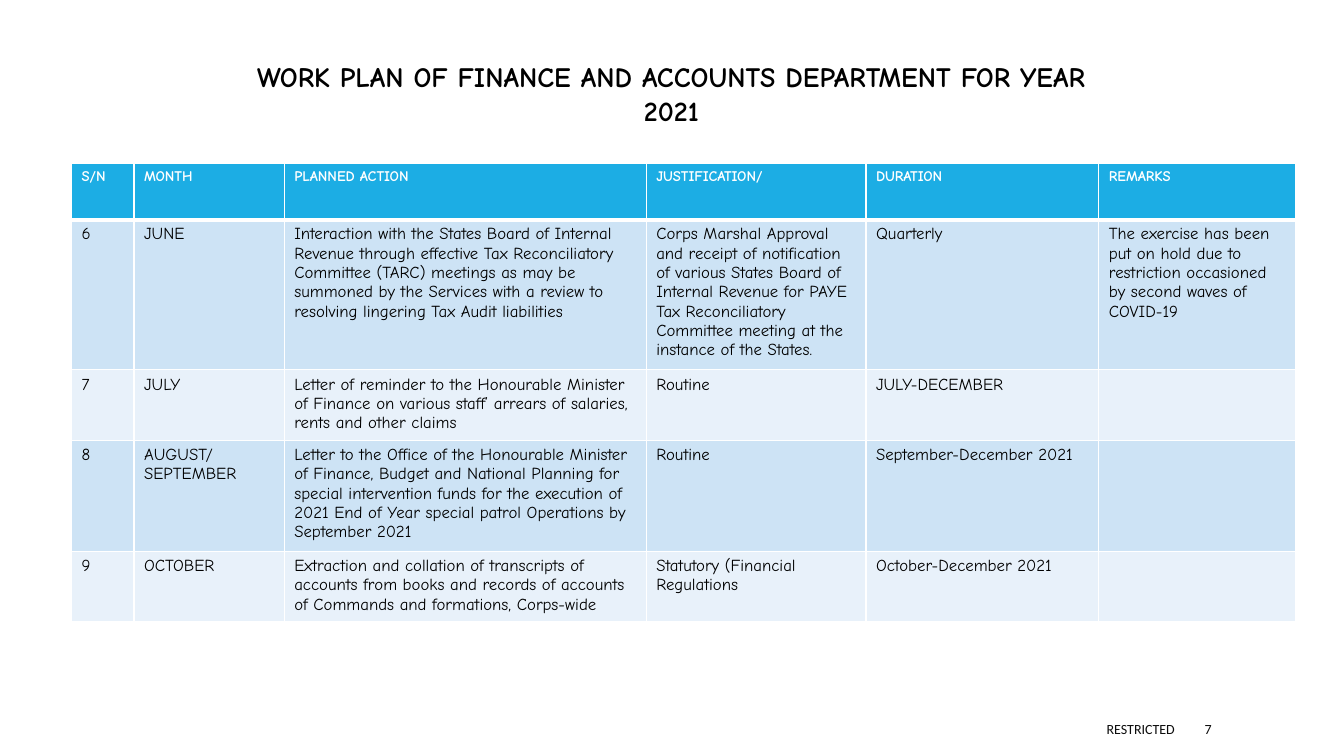
from lxml.etree import SubElement
from pptx import Presentation
from pptx.dml.color import RGBColor
from pptx.enum.text import MSO_ANCHOR as Anchor, MSO_AUTO_SIZE as AutoSize, PP_ALIGN as Align
from pptx.oxml.ns import qn
from pptx.util import Inches, Pt

COLUMN_WIDTHS = [0.62, 1.49, 3.59, 2.18, 2.31, 1.95]
ROW_HEIGHTS = [0.56, 1.49, 0.7, 1.1, 0.7]
WORK_PLAN = [
    ["S/N", "MONTH", "PLANNED ACTION", "JUSTIFICATION/", "DURATION", "REMARKS"],
    ["6", "JUNE",
     "Interaction with the States Board of Internal Revenue through effective Tax "
     "Reconciliatory Committee (TARC) meetings as may be summoned by the Services "
     "with a review to resolving lingering Tax Audit liabilities",
     "Corps Marshal Approval and receipt of notification of various States Board of "
     "Internal Revenue for PAYE Tax Reconciliatory Committee meeting at the instance "
     "of the States.",
     "Quarterly",
     "The exercise has been put on hold due to restriction occasioned by second waves "
     "of COVID-19"],
    ["7", "JULY",
     "Letter of reminder to the Honourable Minister of Finance on various staff’ "
     "arrears of salaries, rents and other claims",
     "Routine", "JULY-DECEMBER", ""],
    ["8", "AUGUST/SEPTEMBER",
     "Letter to the Office of the Honourable Minister of Finance, Budget and National "
     "Planning for special intervention funds for the execution of 2021 End of Year "
     "special patrol Operations by September 2021",
     "Routine", "September-December 2021", ""],
    ["9", "OCTOBER",
     "Extraction and collation of transcripts of accounts from books and records of "
     "accounts of Commands and formations, Corps-wide",
     "Statutory (Financial Regulations", "October-December 2021", ""],
]


def rgb(hex_color):
    return RGBColor.from_string(hex_color)


def write(frame, text, size=12, color="000000", font="Comic Neue", bold=False,
          align=Align.LEFT, anchor=Anchor.TOP):
    """Fill a text frame with one formatted paragraph."""
    frame.word_wrap = True
    frame.vertical_anchor = anchor
    paragraph = frame.paragraphs[0]
    paragraph.alignment = align
    run = paragraph.add_run()
    run.text = text
    run.font.size = Pt(size)
    run.font.name = font
    run.font.bold = bold
    run.font.color.rgb = rgb(color)


def add_border(cell, side, width, color="FFFFFF"):
    """Draw one side of a cell: L, R, T or B. Call before the cell is filled."""
    line = SubElement(cell._tc.get_or_add_tcPr(), qn(f"a:ln{side}"), w=str(Pt(width)))
    SubElement(SubElement(line, qn("a:solidFill")), qn("a:srgbClr"), val=color)


class WorkPlanSlide:
    header_fill = "1CADE4"
    band_fills = ["E8F1FA", "CDE3F5"]
    footer_style = dict(size=10, color="0D0D0D", font="Calibri", anchor=Anchor.MIDDLE)

    def __init__(self, deck):
        self.slide = deck.slides.add_slide(deck.slide_layouts[5])

    def title(self, text, left, top, width, height):
        heading = self.slide.shapes.title
        heading.left, heading.top = Inches(left), Inches(top)
        heading.width, heading.height = Inches(width), Inches(height)
        heading.text_frame.auto_size = AutoSize.NONE
        write(heading.text_frame, text, size=20, bold=True, align=Align.CENTER)

    def table(self, rows, left, top, widths, heights):
        plan = self.slide.shapes.add_table(
            len(rows), len(widths), Inches(left), Inches(top),
            Inches(sum(widths)), Inches(sum(heights))).table
        for column, width in zip(plan.columns, widths):
            column.width = Inches(width)
        for row, height in zip(plan.rows, heights):
            row.height = Inches(height)
        for row_no, entries in enumerate(rows):
            for column_no, entry in enumerate(entries):
                self.cell(plan.cell(row_no, column_no), entry, row_no)

    def cell(self, cell, entry, row_no):
        is_header = row_no == 0
        borders = {"L": 1, "R": 1, "T": 3 if row_no == 1 else 1, "B": 3 if is_header else 1}
        for side, width in borders.items():
            add_border(cell, side, width)
        cell.fill.solid()
        cell.fill.fore_color.rgb = rgb(self.header_fill if is_header
                                       else self.band_fills[row_no % 2])
        if is_header:
            write(cell.text_frame, entry, size=10.5, color="FFFFFF", bold=True)
        elif entry:
            write(cell.text_frame, entry)

    def footer(self, text, left, width, align):
        box = self.slide.shapes.add_textbox(Inches(left), Inches(7.08),
                                            Inches(width), Inches(0.3))
        write(box.text_frame, text, align=align, **self.footer_style)


def main():
    deck = Presentation()
    deck.slide_width, deck.slide_height = Inches(13.33), Inches(7.5)
    page = WorkPlanSlide(deck)
    page.title("WORK PLAN OF FINANCE AND ACCOUNTS DEPARTMENT FOR YEAR 2021",
               2.23, 0.54, 8.86, 0.77)
    page.table(WORK_PLAN, 0.71, 1.62, COLUMN_WIDTHS, ROW_HEIGHTS)
    page.footer("RESTRICTED", 5.3, 6.45, Align.RIGHT)
    page.footer("7", 11.85, 1.06, Align.LEFT)
    deck.save("out.pptx")


if __name__ == "__main__":
    main()
